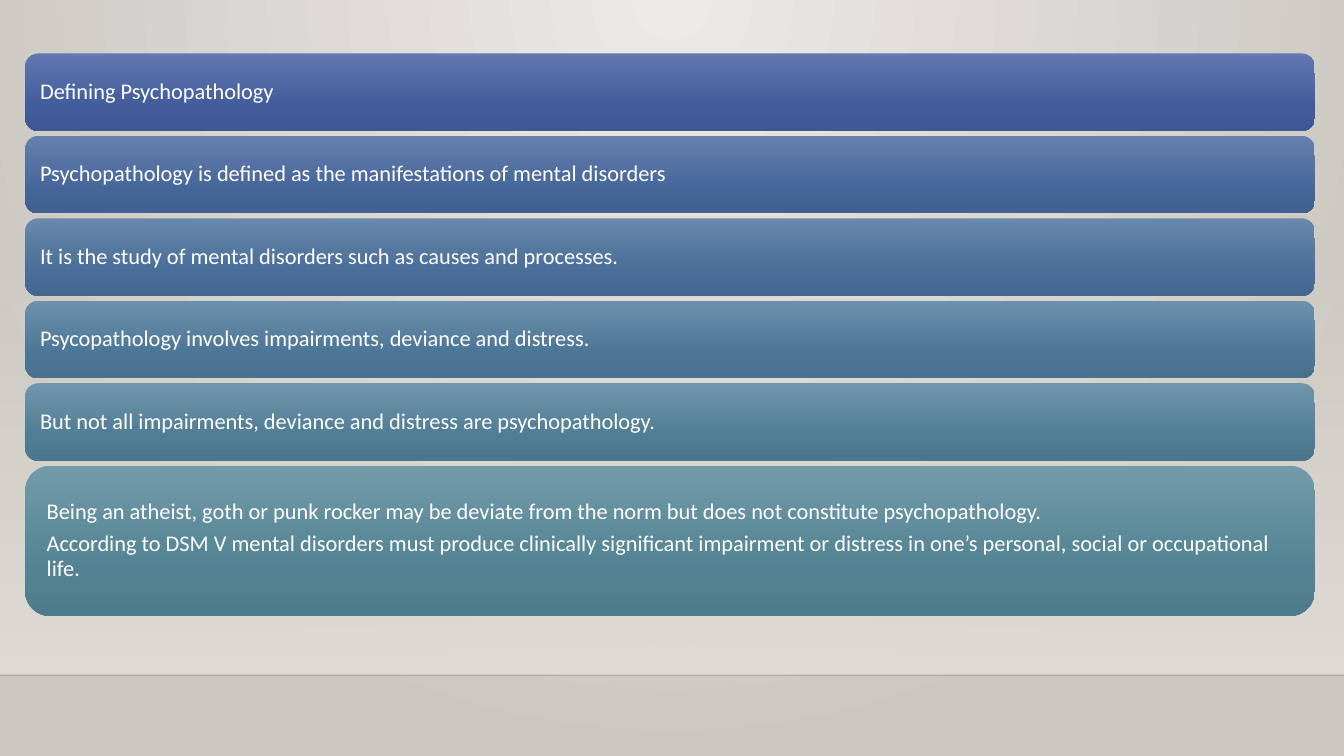
"""Build a slide of stacked gradient cards that define psychopathology."""
from dataclasses import dataclass

import lxml.etree
import pptx
import pptx.dml.color
import pptx.enum.shapes
import pptx.enum.text
import pptx.oxml.ns
import pptx.slide
import pptx.util

Inches = pptx.util.Inches
qn = pptx.oxml.ns.qn

COLORS = {
    "glow": "ECEAE7",
    "backdrop": "CAC7C1",
    "wall": "DFDBD5",
    "floor_line": "000001",
    "text": "FFFFFF",
}
SLIDE_WIDTH, SLIDE_HEIGHT = 13.33, 7.5
WALL_TOP, FLOOR_TOP = 2.21, 6.7
CARD_LEFT, CARD_WIDTH = 0.25, 12.79
FIRST_TOP, LAST_TOP = 0.53, 4.62


@dataclass(frozen=True)
class Stop:
    """One colour stop of a gradient, in percent."""
    position: int
    color: str
    opacity: int = 100


@dataclass(frozen=True)
class Card:
    """A rounded card with its shades from top to bottom."""
    lines: tuple[str, ...]
    shades: tuple[str, str, str]
    height: float = 0.77
    inset: float = 0.11


CARDS = (
    Card(("Defining Psychopathology",), ("6378B0", "425B9B", "3F5793")),
    Card(("Psychopathology is defined as the manifestations of mental disorders",),
         ("6680AF", "466599", "426091")),
    Card(("It is the study of mental disorders such as causes and processes.",),
         ("6988AD", "496E98", "456890")),
    Card(("Psycopathology involves impairments, deviance and distress.",),
         ("6C90AC", "4C7696", "49708E")),
    Card(("But not all impairments, deviance and distress are psychopathology.",),
         ("6F96AB", "507D94", "4C768D")),
    Card(("Being an atheist, goth or punk rocker may be deviate from the norm "
          "but does not constitute psychopathology.",
          "According to DSM V mental disorders must produce clinically significant "
          "impairment or distress in one’s personal, social or occupational life."),
         ("729BA9", "538393", "4F7C8B"), height=1.49, inset=0.14),
)


def add_alpha(color: lxml.etree._Element, opacity: int) -> None:
    """Give a colour element an opacity in percent."""
    lxml.etree.SubElement(color, qn("a:alpha"), val=str(opacity * 1000))


def set_stops(gradient: lxml.etree._Element, stops: list[Stop]) -> None:
    """Replace the colour stops of a gradient."""
    stop_list = gradient.find(qn("a:gsLst"))
    for old_stop in list(stop_list):
        stop_list.remove(old_stop)
    for stop in stops:
        entry = lxml.etree.SubElement(stop_list, qn("a:gs"), pos=str(stop.position * 1000))
        color = lxml.etree.SubElement(entry, qn("a:srgbClr"), val=stop.color)
        if stop.opacity < 100:
            add_alpha(color, stop.opacity)


def paint_background(slide: pptx.slide.Slide) -> None:
    """Fill the background with a glow from the top centre."""
    slide.background.fill.gradient()
    gradient = next(slide._element.iter(qn("a:gradFill")))
    set_stops(gradient, [Stop(0, COLORS["glow"]), Stop(100, COLORS["backdrop"])])
    gradient.remove(gradient.find(qn("a:lin")))
    circle = lxml.etree.Element(qn("a:path"), path="circle")
    lxml.etree.SubElement(circle, qn("a:fillToRect"), l="43000", t="0", r="43000", b="100000")
    gradient.find(qn("a:gsLst")).addnext(circle)


def add_panel(slide: pptx.slide.Slide, kind: pptx.enum.shapes.MSO_SHAPE, left: float,
              top: float, width: float, height: float, stops: list[Stop]):
    """Add a borderless shape shaded from top to bottom."""
    panel = slide.shapes.add_shape(kind, Inches(left), Inches(top), Inches(width), Inches(height))
    panel.shadow.inherit = False
    panel.line.fill.background()
    panel.fill.gradient()
    panel.fill.gradient_angle = 270
    set_stops(next(panel._element.iter(qn("a:gradFill"))), stops)
    return panel


def add_floor_line(slide: pptx.slide.Slide) -> None:
    """Add the faint line between wall and floor."""
    floor_line = slide.shapes.add_connector(
        pptx.enum.shapes.MSO_CONNECTOR.STRAIGHT,
        Inches(0), Inches(FLOOR_TOP), Inches(SLIDE_WIDTH), Inches(FLOOR_TOP))
    floor_line.line.width = pptx.util.Pt(1)
    floor_line.line.color.rgb = pptx.dml.color.RGBColor.from_string(COLORS["floor_line"])
    add_alpha(next(floor_line._element.iter(qn("a:srgbClr"))), 20)
    lxml.etree.SubElement(floor_line._element.spPr, qn("a:effectLst"))


def add_card(slide: pptx.slide.Slide, card: Card, top: float) -> None:
    """Add one card with its text."""
    stops = [Stop(position, shade) for position, shade in zip((0, 69, 100), card.shades)]
    panel = add_panel(slide, pptx.enum.shapes.MSO_SHAPE.ROUNDED_RECTANGLE,
                      CARD_LEFT, top, CARD_WIDTH, card.height, stops)
    frame = panel.text_frame
    frame.word_wrap = True
    frame.vertical_anchor = pptx.enum.text.MSO_ANCHOR.MIDDLE
    frame.margin_left = frame.margin_right = Inches(card.inset)
    frame.margin_top = frame.margin_bottom = Inches(card.inset)
    for index, line in enumerate(card.lines):
        paragraph = frame.add_paragraph() if index else frame.paragraphs[0]
        paragraph.alignment = pptx.enum.text.PP_ALIGN.LEFT
        paragraph.line_spacing = 0.9
        paragraph.space_after = pptx.util.Pt(5.6)
        run = paragraph.add_run()
        run.text = line
        run.font.name = "Calibri"
        run.font.size = pptx.util.Pt(16)
        run.font.color.rgb = pptx.dml.color.RGBColor.from_string(COLORS["text"])


def main() -> None:
    """Create and save the presentation."""
    presentation = pptx.Presentation()
    presentation.slide_width = Inches(SLIDE_WIDTH)
    presentation.slide_height = Inches(SLIDE_HEIGHT)
    slide = presentation.slides.add_slide(presentation.slide_layouts[6])
    paint_background(slide)
    add_panel(slide, pptx.enum.shapes.MSO_SHAPE.RECTANGLE,
              0, WALL_TOP, SLIDE_WIDTH, FLOOR_TOP - WALL_TOP,
              [Stop(0, COLORS["wall"], 0), Stop(100, COLORS["wall"])])
    add_floor_line(slide)
    pitch = (LAST_TOP - FIRST_TOP) / (len(CARDS) - 1)
    for index, card in enumerate(CARDS):
        add_card(slide, card, FIRST_TOP + index * pitch)
    presentation.save("out.pptx")


if __name__ == "__main__":
    main()
